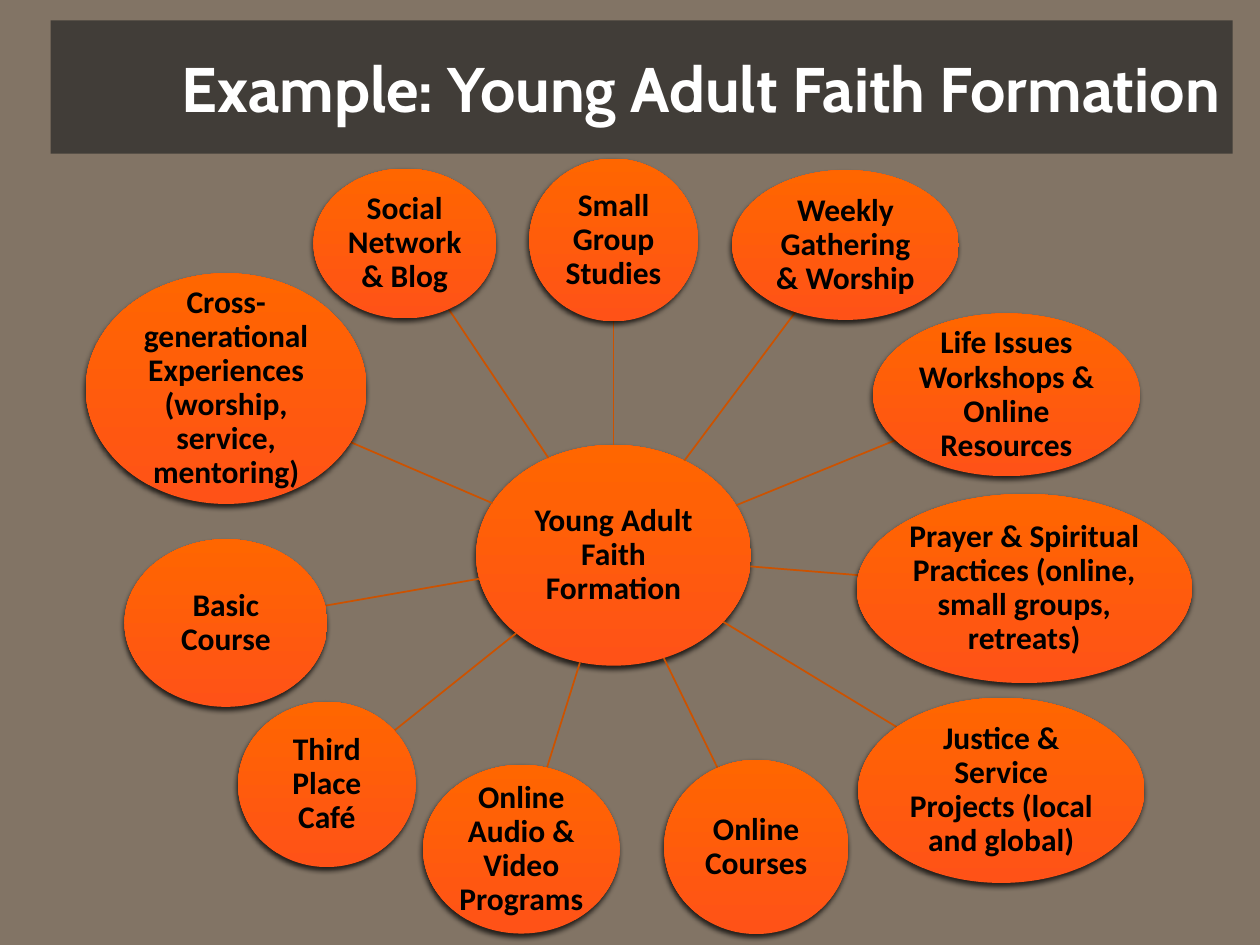
from dataclasses import dataclass
from math import hypot

from lxml.etree import SubElement as Sub
from pptx import Presentation
from pptx.dml.color import RGBColor as Rgb
from pptx.enum.shapes import MSO_CONNECTOR as Link, MSO_SHAPE as Kind
from pptx.enum.text import MSO_ANCHOR as Anchor, PP_ALIGN as Align
from pptx.oxml.ns import qn
from pptx.util import Cm, Pt


@dataclass(frozen=True)
class Theme:
    back: str = "827465"
    band: str = "262626"
    white: str = "FFFFFF"
    black: str = "000000"
    low: str = "FF5217"
    high: str = "FF6600"
    line: str = "CC5200"
    head: str = "Cabin"
    body: str = "Calibri"
    big: int = 36
    small: int = 18


@dataclass(frozen=True)
class Oval:
    text: str
    left: float
    top: float
    wide: float
    high: float

    @property
    def mid(self):
        return self.left + self.wide / 2, self.top + self.high / 2

    def edge(self, goal):
        """Point on the rim in the direction of goal."""
        x, y = self.mid
        dx, dy = goal[0] - x, goal[1] - y
        far = hypot(dx / (self.wide / 2), dy / (self.high / 2))
        return x + dx / far, y + dy / far


class Deck:
    def __init__(self, theme):
        self.theme = theme
        self.file = Presentation()
        self.file.slide_width, self.file.slide_height = Cm(25.4), Cm(19.05)
        self.slide = self.file.slides.add_slide(self.file.slide_layouts[5])
        fill = self.slide.background.fill
        fill.solid()
        fill.fore_color.rgb = Rgb.from_string(theme.back)

    def label(self, frame, text, font, size, color, align):
        frame.word_wrap = True
        frame.vertical_anchor = Anchor.MIDDLE
        par = frame.paragraphs[0]
        par.alignment = align
        run = par.add_run()
        run.text = text
        run.font.name, run.font.size, run.font.bold = font, Pt(size), True
        run.font.color.rgb = Rgb.from_string(color)
        return par

    def title(self, text, left, top, wide, high):
        t, box = self.theme, self.slide.shapes.title
        box.left, box.top, box.width, box.height = map(Cm, (left, top, wide, high))
        box.fill.solid()
        box.fill.fore_color.rgb = Rgb.from_string(t.band)
        tint = box._element.spPr.find(qn("a:solidFill"))[0]
        Sub(tint, qn("a:alpha"), val="70000")
        self.label(box.text_frame, text, t.head, t.big, t.white, Align.RIGHT)

    def oval(self, item):
        t = self.theme
        size = map(Cm, (item.left, item.top, item.wide, item.high))
        shape = self.slide.shapes.add_shape(Kind.OVAL, *size)
        shape.line.fill.background()
        shape.fill.gradient()
        shape.fill.gradient_angle = 90
        for stop, color in zip(shape.fill.gradient_stops, (t.low, t.high)):
            stop.color.rgb = Rgb.from_string(color)
        self.shade(shape)
        frame = shape.text_frame
        frame.margin_left = frame.margin_right = Cm(0.03)
        frame.margin_top = frame.margin_bottom = Cm(0.03)
        par = self.label(frame, item.text, t.body, t.small, t.black, Align.CENTER)
        par.line_spacing = 0.9

    def shade(self, shape):
        # Soft drop shadow below the oval
        shape.shadow.inherit = False
        host = shape._element.spPr.find(qn("a:effectLst"))
        drop = Sub(host, qn("a:outerShdw"), blurRad=str(Pt(3)), dist=str(Pt(2)),
                   dir=str(110 * 60000), rotWithShape="0")
        tint = Sub(drop, qn("a:srgbClr"), val=self.theme.black)
        Sub(tint, qn("a:alpha"), val="75000")

    def spoke(self, hub, item):
        ends = hub.edge(item.mid) + item.edge(hub.mid)
        line = self.slide.shapes.add_connector(Link.STRAIGHT, *map(Cm, ends))
        line.line.color.rgb = Rgb.from_string(self.theme.line)
        line.line.width = Pt(1)
        Sub(line._element.spPr, qn("a:effectLst"))


HUB = Oval("Young Adult Faith Formation", 9.6, 8.97, 5.54, 4.45)

# Clockwise from the top
RING = [
    Oval("Small Group Studies", 10.67, 3.2, 3.4, 3.28),
    Oval("Weekly Gathering & Worship", 14.76, 3.43, 4.57, 3.02),
    Oval("Life Issues Workshops & Online Resources", 17.6, 6.32, 5.38, 3.28),
    Oval("Prayer & Spiritual Practices (online, small groups, retreats)",
         17.27, 9.96, 6.76, 3.81),
    Oval("Justice & Service Projects (local and global)", 17.3, 14.07, 5.77, 3.73),
    Oval("Online Courses", 13.39, 15.32, 3.71, 3.51),
    Oval("Online Audio & Video Programs", 8.53, 15.42, 3.96, 3.4),
    Oval("Third Place Café", 4.8, 14.15, 3.58, 3.33),
    Oval("Basic Course", 2.51, 10.87, 4.09, 3.38),
    Oval("Cross-generational Experiences (worship, service, mentoring)",
         1.73, 5.51, 5.66, 4.65),
    Oval("Social Network & Blog", 6.32, 3.4, 3.68, 3.02),
]


def main():
    deck = Deck(Theme())
    deck.title("Example: Young Adult Faith Formation", 1.02, 0.41, 23.83, 2.69)
    # Hub, then each spoke with its oval
    deck.oval(HUB)
    for item in RING:
        deck.spoke(HUB, item)
        deck.oval(item)
    deck.file.save("out.pptx")


if __name__ == "__main__":
    main()
